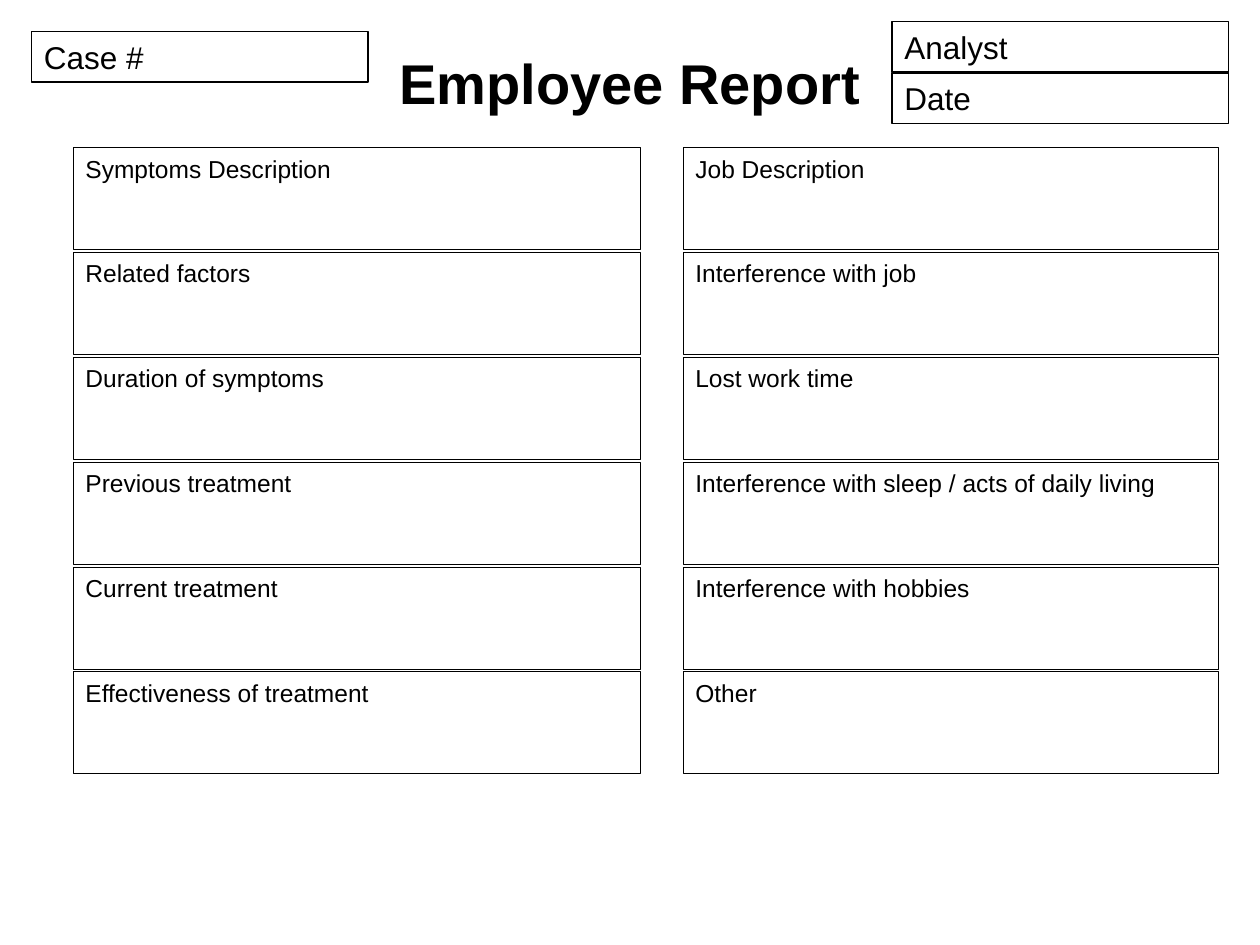
from dataclasses import dataclass

from pptx import Presentation
from pptx import util as u
from pptx.dml import color
from pptx.enum import shapes, text


@dataclass(frozen=True)
class Theme:
    font: str = "Arial"
    ink: color.RGBColor = color.RGBColor(0, 0, 0)
    paper: color.RGBColor = color.RGBColor(255, 255, 255)
    title_size: int = 32
    header_size: int = 18
    field_size: int = 14
    header_line: float = 1
    field_line: float = 0.25


THEME = Theme()

HEADER_FIELDS = [
    ("Case #", 0.25, 0.25),
    ("Analyst", 7.08, 0.17),
    ("Date", 7.08, 0.58),
]
HEADER_WIDTH, HEADER_HEIGHT = 2.67, 0.4

REPORT_COLUMNS = [
    (0.58, 4.5, [
        "Symptoms Description",
        "Related factors",
        "Duration of symptoms",
        "Previous treatment",
        "Current treatment",
        "Effectiveness of treatment",
    ]),
    (5.42, 4.25, [
        "Job Description",
        "Interference with job",
        "Lost work time",
        "Interference with sleep / acts of daily living",
        "Interference with hobbies",
        "Other",
    ]),
]
FIRST_ROW_TOP, LAST_ROW_TOP, FIELD_HEIGHT = 1.17, 5.33, 0.81


def write_text(shape, content, *, size, bold=False,
               align=text.PP_ALIGN.LEFT, anchor=text.MSO_ANCHOR.TOP):
    frame = shape.text_frame
    frame.word_wrap = True
    frame.auto_size = text.MSO_AUTO_SIZE.NONE
    frame.vertical_anchor = anchor
    paragraph = frame.paragraphs[0]
    paragraph.alignment = align
    run = paragraph.add_run()
    run.text = content
    run.font.name = THEME.font
    run.font.size = u.Pt(size)
    run.font.bold = bold
    run.font.color.rgb = THEME.ink


def add_title(slide, content):
    title = slide.shapes.title
    title.left, title.top = u.Inches(0.5), u.Inches(0.3)
    title.width, title.height = u.Inches(9), u.Inches(0.7)
    write_text(title, content, size=THEME.title_size, bold=True,
               align=text.PP_ALIGN.CENTER, anchor=text.MSO_ANCHOR.MIDDLE)


def add_field(slide, label, left, top, width, height, *, size, line_width):
    field = slide.shapes.add_shape(
        shapes.MSO_SHAPE.RECTANGLE,
        u.Inches(left), u.Inches(top), u.Inches(width), u.Inches(height))
    field.shadow.inherit = False
    field.fill.background()
    field.line.color.rgb = THEME.ink
    field.line.width = u.Pt(line_width)
    write_text(field, label, size=size)


def add_report_column(slide, left, width, labels):
    pitch = (LAST_ROW_TOP - FIRST_ROW_TOP) / (len(labels) - 1)
    for row, label in enumerate(labels):
        add_field(slide, label, left, FIRST_ROW_TOP + row * pitch, width,
                  FIELD_HEIGHT, size=THEME.field_size,
                  line_width=THEME.field_line)


def main():
    presentation = Presentation()
    presentation.slide_width = u.Inches(10)
    presentation.slide_height = u.Inches(7.5)
    slide = presentation.slides.add_slide(presentation.slide_layouts[5])
    slide.background.fill.solid()
    slide.background.fill.fore_color.rgb = THEME.paper

    add_title(slide, "Employee Report")
    for left, width, labels in REPORT_COLUMNS:
        add_report_column(slide, left, width, labels)
    for label, left, top in HEADER_FIELDS:
        add_field(slide, label, left, top, HEADER_WIDTH, HEADER_HEIGHT,
                  size=THEME.header_size, line_width=THEME.header_line)

    presentation.save("out.pptx")


if __name__ == "__main__":
    main()
